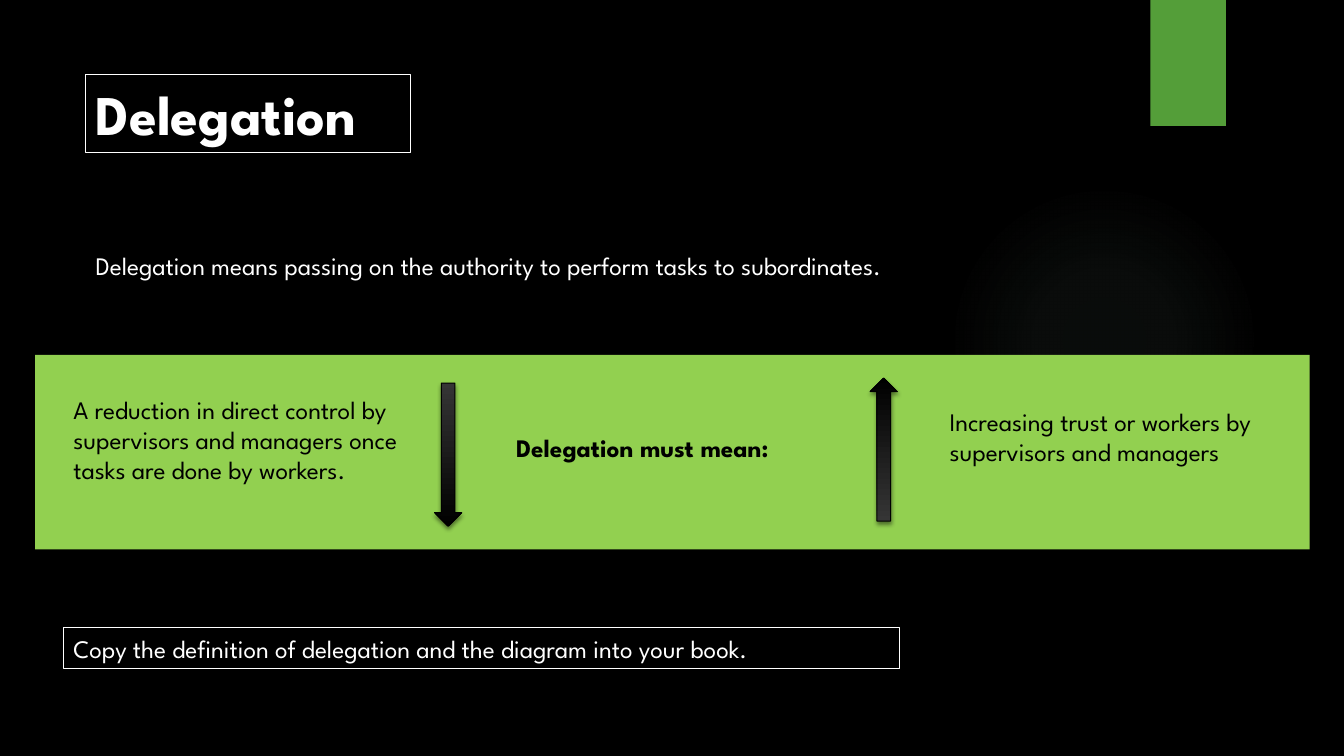
from pptx import Presentation
from pptx.dml.color import RGBColor
from pptx.enum import shapes, text
from pptx.oxml import parse_xml
from pptx.oxml.ns import nsdecls, qn
from pptx.util import Inches, Pt

BLACK = RGBColor(0x00, 0x00, 0x00)
WHITE = RGBColor(0xFF, 0xFF, 0xFF)
CHARCOAL = RGBColor(0x35, 0x35, 0x35)
DARK_GREEN = RGBColor(0x54, 0x9E, 0x39)
LIME = RGBColor(0x92, 0xD0, 0x50)
FONT = "League Spartan"

GLOW_FILL = f"""<a:gradFill {nsdecls('a')} rotWithShape="1"><a:gsLst>
<a:gs pos="0"><a:srgbClr val="87A896"><a:alpha val="7000"/></a:srgbClr></a:gs>
<a:gs pos="36000"><a:srgbClr val="87A896"><a:alpha val="6000"/></a:srgbClr></a:gs>
<a:gs pos="69000"><a:srgbClr val="87A896"><a:alpha val="0"/></a:srgbClr></a:gs>
</a:gsLst><a:path path="circle">
<a:fillToRect l="50000" t="50000" r="50000" b="50000"/></a:path></a:gradFill>"""
SHADOW = f"""<a:outerShdw {nsdecls('a')} blurRad="38100" dist="25400" dir="5400000"
rotWithShape="0"><a:srgbClr val="000000"><a:alpha val="45000"/></a:srgbClr></a:outerShdw>"""

presentation = Presentation()
presentation.slide_width = Inches(13.33)
presentation.slide_height = Inches(7.5)
slide = presentation.slides.add_slide(presentation.slide_layouts[6])
slide.background.fill.solid()
slide.background.fill.fore_color.rgb = BLACK


def add_plain_shape(kind, left, top, width, height, color=None):
    """Add a shape with no line and no shadow, and a fill only if a colour is given."""
    shape = slide.shapes.add_shape(
        kind, Inches(left), Inches(top), Inches(width), Inches(height))
    shape.shadow.inherit = False
    shape.line.fill.background()
    if color is None:
        shape.fill.background()
    else:
        shape.fill.solid()
        shape.fill.fore_color.rgb = color
    return shape


def add_text(words, left, top, width, height, size=18, color=WHITE, bold=False, outlined=False):
    if outlined:
        box = add_plain_shape(shapes.MSO_SHAPE.RECTANGLE, left, top, width, height)
        box.line.color.rgb = WHITE
        box.line.width = Pt(0.75)
    else:
        box = slide.shapes.add_textbox(
            Inches(left), Inches(top), Inches(width), Inches(height))
    frame = box.text_frame
    frame.word_wrap = True
    frame.vertical_anchor = text.MSO_ANCHOR.TOP
    paragraph = frame.paragraphs[0]
    paragraph.text = words
    paragraph.alignment = text.PP_ALIGN.LEFT
    font = paragraph.font
    font.name = FONT
    font.size = Pt(size)
    font.bold = bold
    font.color.rgb = color


# Backdrop
glow = add_plain_shape(shapes.MSO_SHAPE.OVAL, 9.41, 1.83, 3.08, 3.08)
no_fill = glow._element.spPr.find(qn("a:noFill"))
no_fill.getparent().replace(no_fill, parse_xml(GLOW_FILL))
tab = add_plain_shape(shapes.MSO_SHAPE.RECTANGLE, 11.41, 0, 0.75, 1.25, DARK_GREEN)
add_plain_shape(shapes.MSO_SHAPE.RECTANGLE, 0.35, 3.52, 12.64, 1.93, LIME)

# Title and definition
add_text("Delegation", 0.85, 0.74, 3.22, 0.77, size=40, bold=True, outlined=True)
add_text("Delegation means passing on the authority to perform tasks to subordinates.",
         0.85, 2.43, 10.46, 0.4)

# Diagram
add_text("A reduction in direct control by supervisors and managers once tasks are done by workers.",
         0.63, 3.86, 3.43, 1.31, color=BLACK)
add_text("Increasing trust or workers by supervisors and managers",
         9.32, 3.98, 3.43, 1.01, color=BLACK)
add_text("Delegation must mean:", 5.02, 4.24, 3.18, 0.4, color=BLACK, bold=True)

shadowed = [tab]
for left, top, rotation in [(4.31, 3.8, 0), (8.63, 3.75, 180)]:
    arrow = add_plain_shape(shapes.MSO_SHAPE.DOWN_ARROW, left, top, 0.27, 1.42)
    arrow.rotation = rotation
    arrow.fill.gradient()
    arrow.fill.gradient_angle = 270
    for stop, position, color in zip(arrow.fill.gradient_stops, (0, 1), (CHARCOAL, BLACK)):
        stop.position = position
        stop.color.rgb = color
    arrow.line.color.rgb = BLACK
    arrow.line.width = Pt(0.75)
    shadowed.append(arrow)

for shape in shadowed:
    shape._element.spPr.find(qn("a:effectLst")).append(parse_xml(SHADOW))

# Task
add_text("Copy the definition of delegation and the diagram into your book.",
         0.63, 6.23, 8.29, 0.4, outlined=True)

presentation.save("out.pptx")
